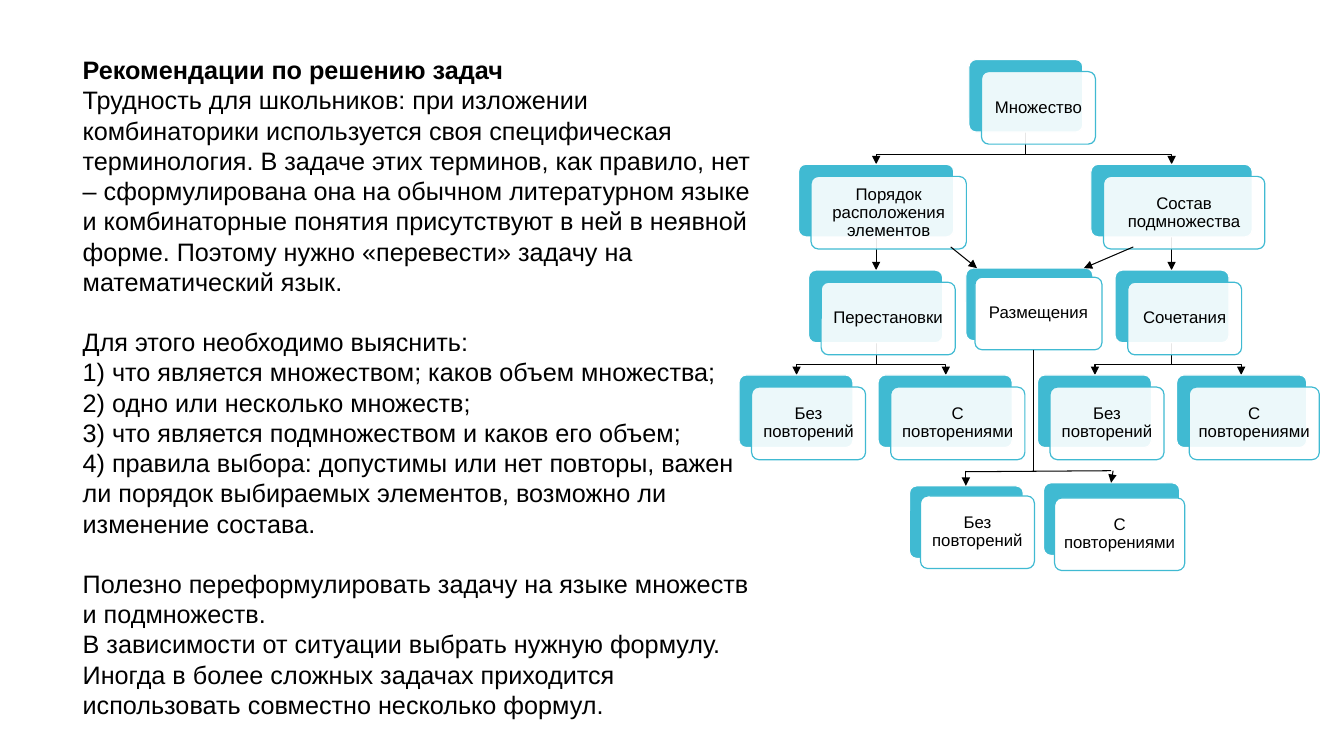
from dataclasses import dataclass

import lxml.etree
import pptx
import pptx.dml.color
import pptx.enum.shapes
import pptx.enum.text
import pptx.oxml.ns
import pptx.util
from pptx.util import Inches

BLACK = pptx.dml.color.RGBColor(0x00, 0x00, 0x00)
WHITE = pptx.dml.color.RGBColor(0xFF, 0xFF, 0xFF)
TEAL = pptx.dml.color.RGBColor(0x40, 0xBA, 0xD2)
FONT = "Arial"
CARD_HEIGHT = 0.72
TREE_TOP = 0.59
LEVEL_STEP = 1.043


@dataclass(frozen=True)
class Card:
    text: str
    left: float
    top: float
    width: float
    back_width: float
    shift_x: float = 0.125
    shift_y: float = 0.12
    opacity: int = 90


@dataclass(frozen=True)
class Link:
    start: tuple[float, float]
    end: tuple[float, float]
    arrow: bool = True


@dataclass(frozen=True)
class BodyLine:
    text: str
    gap_before: bool = False


def level(index: int) -> float:
    return round(TREE_TOP + index * LEVEL_STEP, 2)


def tree_card(text: str, left: float, index: int, width: float) -> Card:
    return Card(text, left, level(index), width, width)


TITLE = "Рекомендации по решению задач"
BODY = [
    BodyLine(
        "Трудность для школьников: при изложении комбинаторики используется своя "
        "специфическая терминология. В задаче этих терминов, как правило, нет – "
        "сформулирована она на обычном литературном языке и комбинаторные понятия "
        "присутствуют в ней в неявной форме. Поэтому нужно «перевести» задачу на "
        "математический язык."
    ),
    BodyLine("Для этого необходимо выяснить:", True),
    BodyLine("1) что является множеством; каков объем множества;"),
    BodyLine("2) одно или несколько множеств;"),
    BodyLine("3) что является подмножеством и каков его объем;"),
    BodyLine(
        "4) правила выбора: допустимы или нет повторы, важен ли порядок "
        "выбираемых элементов, возможно ли изменение состава."
    ),
    BodyLine("Полезно переформулировать задачу на языке множеств и подмножеств.", True),
    BodyLine("В зависимости от ситуации выбрать нужную формулу."),
    BodyLine(
        "Иногда в более сложных задачах приходится использовать совместно "
        "несколько формул."
    ),
]
WITHOUT = "Без повторений"
WITH = "С повторениями"
CARDS = [
    tree_card("Множество", 9.61, 0, 1.13),
    tree_card("Порядок расположения элементов", 7.92, 1, 1.54),
    tree_card("Перестановки", 8.02, 2, 1.33),
    tree_card(WITHOUT, 7.33, 3, 1.13),
    tree_card(WITH, 8.71, 3, 1.33),
    tree_card("Состав подмножества", 10.82, 1, 1.6),
    tree_card("Сочетания", 11.06, 2, 1.13),
    tree_card(WITHOUT, 10.29, 3, 1.13),
    tree_card(WITH, 11.67, 3, 1.29),
    Card("Размещения", 9.58, 2.66, 1.26, 1.26, 0.09, 0.09, 100),
    Card(WITHOUT, 9.02, 4.82, 1.13, 1.13, 0.11, 0.1, 100),
    Card(WITH, 10.35, 4.79, 1.29, 1.35, 0.11, 0.15, 100),
]
ROOT_X, ORDER_X, CONTENT_X = 10.17, 8.69, 11.62
BRANCHES = [
    (CONTENT_X, 12.31, 2),
    (CONTENT_X, 10.86, 2),
    (ROOT_X, CONTENT_X, 0),
    (ORDER_X, 9.38, 2),
    (ORDER_X, 7.9, 2),
    (ROOT_X, ORDER_X, 0),
]
STEMS = [
    Link((x, level(1) + CARD_HEIGHT), (x, level(2))) for x in (CONTENT_X, ORDER_X)
]
PLACEMENT_LINKS = [
    Link((9.43, 2.45), (9.69, 2.66)),
    Link((11.24, 2.45), (10.75, 2.66)),
    Link((10.25, 3.47), (10.25, 4.67), False),
    Link((9.58, 4.68), (11.02, 4.67), False),
    Link((9.58, 4.67), (9.58, 4.82)),
    Link((11.04, 4.67), (11.02, 4.79)),
]


def add_child(parent, tag: str, **attributes: str):
    return lxml.etree.SubElement(parent, pptx.oxml.ns.qn(tag), attributes)


def add_run(paragraph, text: str, size: float, bold: bool = False) -> None:
    run = paragraph.add_run()
    run.text = text
    run.font.name = FONT
    run.font.size = pptx.util.Pt(size)
    run.font.bold = bold
    run.font.color.rgb = BLACK


def format_line(line, width: float, arrow: bool) -> None:
    line.color.rgb = BLACK
    line.width = pptx.util.Pt(width)
    if arrow:
        add_child(line._get_or_add_ln(), "a:tailEnd", type="triangle")


def place_text(shape, top: float, height: float):
    shape.left, shape.top = Inches(0.72), Inches(top)
    shape.width, shape.height = Inches(6.96), Inches(height)
    frame = shape.text_frame
    frame.word_wrap = True
    frame.auto_size = pptx.enum.text.MSO_AUTO_SIZE.NONE
    frame.vertical_anchor = pptx.enum.text.MSO_ANCHOR.TOP
    return frame


def add_body(shape) -> None:
    frame = place_text(shape, 0.79, 6.16)
    for index, line in enumerate(BODY):
        paragraph = frame.add_paragraph() if index else frame.paragraphs[0]
        paragraph.space_before = pptx.util.Pt(21.5 if line.gap_before else 0)
        properties = paragraph._p.get_or_add_pPr()
        properties.set("marL", "0")
        properties.set("indent", "0")
        add_child(properties, "a:buNone")
        add_run(paragraph, line.text, 18)


def add_branch(slide, start_x: float, end_x: float, index: int) -> None:
    top = level(index) + CARD_HEIGHT
    bottom = level(index + 1)
    bend = bottom - 0.1
    builder = slide.shapes.build_freeform(Inches(start_x), Inches(top))
    corners = [(start_x, bend), (end_x, bend), (end_x, bottom)]
    builder.add_line_segments([(Inches(x), Inches(y)) for x, y in corners], close=False)
    shape = builder.convert_to_shape()
    shape.shadow.inherit = False
    shape.fill.background()
    format_line(shape.line, 0.85, True)


def add_link(slide, link: Link, width: float) -> None:
    points = [Inches(value) for value in (*link.start, *link.end)]
    connector = slide.shapes.add_connector(
        pptx.enum.shapes.MSO_CONNECTOR.STRAIGHT, *points
    )
    format_line(connector.line, width, link.arrow)
    add_child(connector._element.spPr, "a:effectLst")


def add_panel(slide, left: float, top: float, width: float, fill, border):
    shape = slide.shapes.add_shape(
        pptx.enum.shapes.MSO_SHAPE.ROUNDED_RECTANGLE,
        Inches(left), Inches(top), Inches(width), Inches(CARD_HEIGHT),
    )
    shape.adjustments[0] = 0.1
    shape.shadow.inherit = False
    shape.fill.solid()
    shape.fill.fore_color.rgb = fill
    shape.line.color.rgb = border
    shape.line.width = pptx.util.Pt(0.85)
    return shape


def add_card(slide, card: Card) -> None:
    add_panel(slide, card.left, card.top, card.back_width, TEAL, WHITE)
    left, top = card.left + card.shift_x, card.top + card.shift_y
    front = add_panel(slide, left, top, card.width, WHITE, TEAL)
    color = front._element.spPr.find(".//" + pptx.oxml.ns.qn("a:srgbClr"))
    add_child(color, "a:alpha", val=str(card.opacity * 1000))
    frame = front.text_frame
    frame.word_wrap = True
    frame.vertical_anchor = pptx.enum.text.MSO_ANCHOR.MIDDLE
    frame.margin_left = frame.margin_right = Inches(0.06)
    frame.margin_top = frame.margin_bottom = Inches(0.06)
    paragraph = frame.paragraphs[0]
    paragraph.alignment = pptx.enum.text.PP_ALIGN.CENTER
    paragraph.line_spacing = 0.9
    add_run(paragraph, card.text, 12)


def main() -> None:
    presentation = pptx.Presentation()
    presentation.slide_width, presentation.slide_height = Inches(13.33), Inches(7.5)
    slide = presentation.slides.add_slide(presentation.slide_layouts[1])
    title = place_text(slide.shapes.title, 0.49, 0.4).paragraphs[0]
    title.alignment = pptx.enum.text.PP_ALIGN.LEFT
    add_run(title, TITLE, 18, True)
    add_body(slide.placeholders[1])
    for branch in BRANCHES:
        add_branch(slide, *branch)
    for stem in STEMS:
        add_link(slide, stem, 0.85)
    for card in CARDS:
        add_card(slide, card)
    for link in PLACEMENT_LINKS:
        add_link(slide, link, 0.75)
    presentation.save("out.pptx")


if __name__ == "__main__":
    main()
